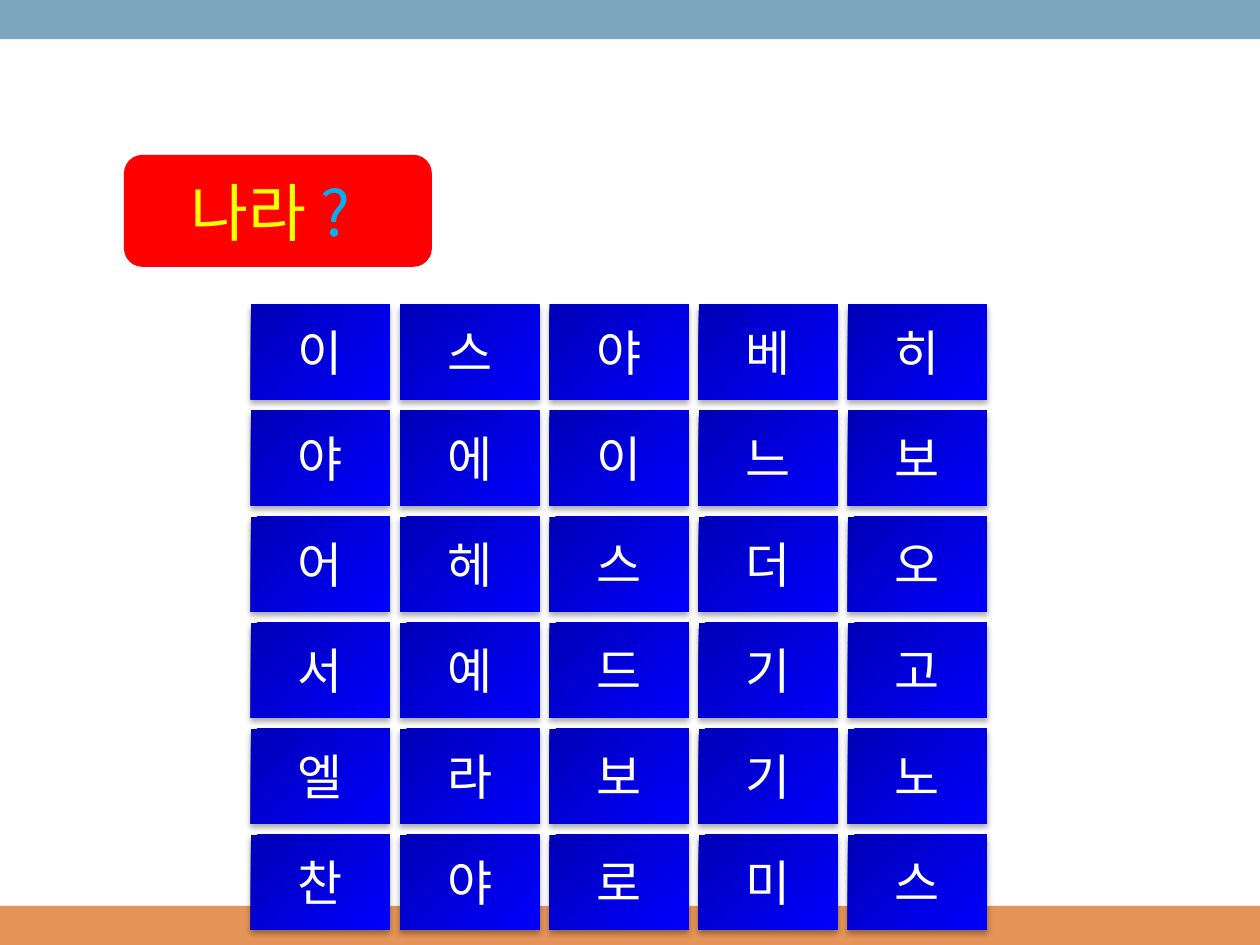
import pptx
import pptx.dml.color
import pptx.enum.shapes
import pptx.enum.text
import pptx.oxml
import pptx.oxml.ns
import pptx.util

Pt = pptx.util.Pt
RGBColor = pptx.dml.color.RGBColor
SHAPE = pptx.enum.shapes.MSO_SHAPE

FONT = "Noto Sans CJK KR"
WHITE = RGBColor(0xFF, 0xFF, 0xFF)
BLACK = RGBColor(0x00, 0x00, 0x00)
PALE = RGBColor(0xEB, 0xE9, 0xED)
TOP_BLUE = RGBColor(0x7B, 0xA5, 0xBE)
BOTTOM_ORANGE = RGBColor(0xE4, 0x94, 0x58)
TILE_DARK = RGBColor(0x00, 0x00, 0xB6)
TILE_LIGHT = RGBColor(0x00, 0x00, 0xFF)
RED = RGBColor(0xFF, 0x00, 0x00)
YELLOW = RGBColor(0xFF, 0xFF, 0x00)
CYAN = RGBColor(0x00, 0xB0, 0xF0)

WIDTH, HEIGHT, BAND = 720, 540, 22.4
GRID_LEFT, GRID_TOP = 143.3, 174
STEP_X, STEP_Y = 85.3, 60.6
TILE_W, TILE_H = 79.5, 54.3
ROWS = ["이스야베히", "야에이느보", "어헤스더오", "서예드기고", "엘라보기노", "찬야로미스"]


class Board:
    def __init__(self, s):
        self.s = s

    def shape(self, kind, x, y, w, h):
        sp = self.s.shapes.add_shape(kind, Pt(x), Pt(y), Pt(w), Pt(h))
        sp.shadow.inherit = False
        sp.line.fill.background()
        return sp

    def band(self, y, color):
        sp = self.shape(SHAPE.RECTANGLE, 0, y, WIDTH, BAND)
        sp.fill.solid()
        sp.fill.fore_color.rgb = color

    def shadow(self, sp, color, alpha, blur, dist):
        """Cast a shadow straight down; alpha is in percent."""
        effects = sp._element.spPr.find(pptx.oxml.ns.qn("a:effectLst"))
        effects.append(pptx.oxml.parse_xml(
            f'<a:outerShdw {pptx.oxml.ns.nsdecls("a")} blurRad="{Pt(blur)}" '
            f'dist="{Pt(dist)}" dir="5400000" rotWithShape="0">'
            f'<a:srgbClr val="{color}"><a:alpha val="{alpha * 1000}"/></a:srgbClr>'
            '</a:outerShdw>'))

    def text(self, sp, size, runs, wrap):
        tf = sp.text_frame
        tf.word_wrap = wrap
        tf.vertical_anchor = pptx.enum.text.MSO_ANCHOR.MIDDLE
        p = tf.paragraphs[0]
        p.alignment = pptx.enum.text.PP_ALIGN.CENTER
        p.font.size = Pt(size)
        p.font.name = FONT
        for words, color in runs:
            r = p.add_run()
            r.text = words
            r.font.color.rgb = color
            r.font.name = FONT
            ea = r.font._element.makeelement(pptx.oxml.ns.qn("a:ea"), {"typeface": FONT})
            r.font._element.append(ea)

    def title(self, x, y, w, h, runs):
        sp = self.shape(SHAPE.ROUNDED_RECTANGLE, x, y, w, h)
        sp.fill.solid()
        sp.fill.fore_color.rgb = RED
        self.shadow(sp, PALE, 27, 1, 0)
        self.text(sp, 36, runs, True)

    def tile(self, x, y, syllable):
        sp = self.shape(SHAPE.RECTANGLE, x, y, TILE_W, TILE_H)
        sp.fill.gradient()
        sp.fill.gradient_angle = 315
        for stop, color in zip(sp.fill.gradient_stops, (TILE_DARK, TILE_LIGHT)):
            stop.color.rgb = color
        self.shadow(sp, BLACK, 32, 3.5, 2.2)
        self.text(sp, 28, [(syllable, WHITE)], False)


def main():
    prs = pptx.Presentation()
    prs.slide_width, prs.slide_height = Pt(WIDTH), Pt(HEIGHT)
    board = Board(prs.slides.add_slide(prs.slide_layouts[6]))
    board.band(HEIGHT - BAND, BOTTOM_ORANGE)
    board.band(0, TOP_BLUE)
    board.title(70.8, 88.5, 176, 64, [("나라 ", YELLOW), ("? ", CYAN)])
    for row, syllables in enumerate(ROWS):
        for col, syllable in enumerate(syllables):
            board.tile(GRID_LEFT + col * STEP_X, GRID_TOP + row * STEP_Y, syllable)
    prs.save("out.pptx")


if __name__ == "__main__":
    main()
